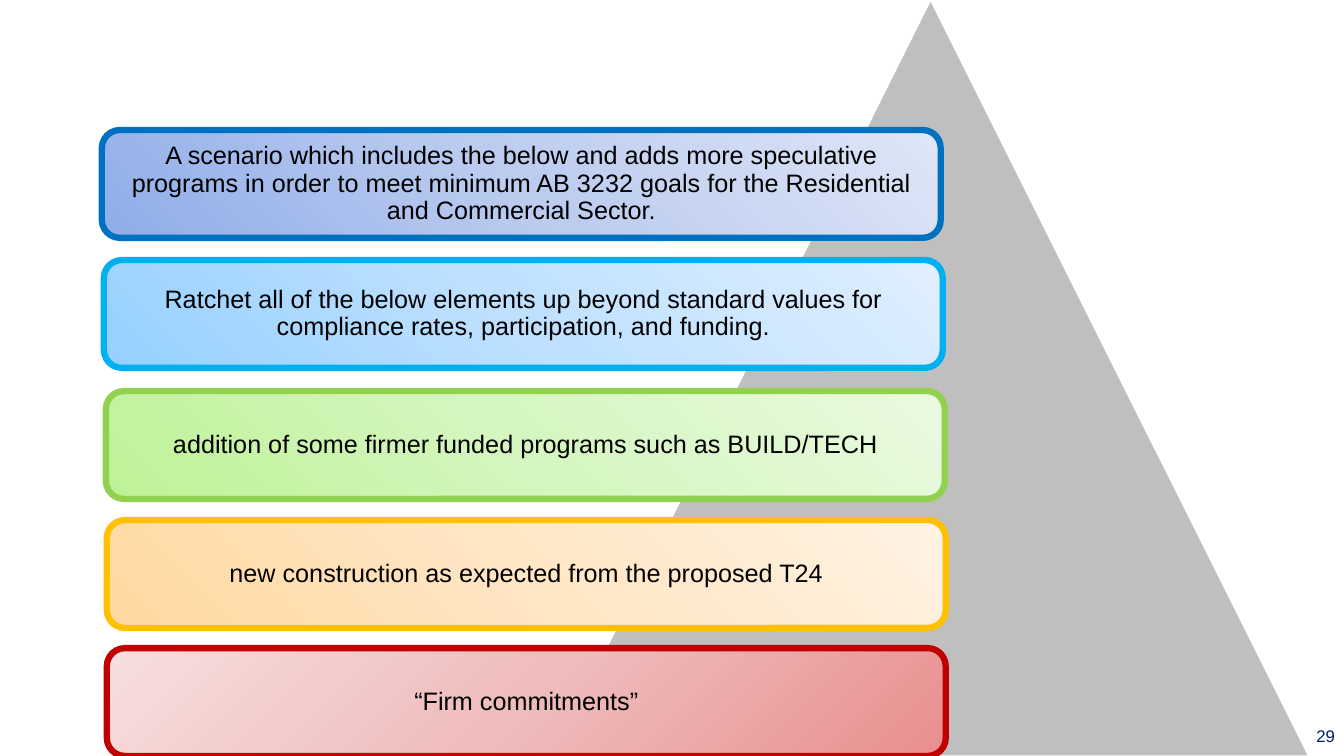
from dataclasses import dataclass

from lxml.etree import SubElement
from pptx import Presentation
from pptx.dml.color import RGBColor
from pptx.enum.shapes import MSO_SHAPE as Preset
from pptx.enum.text import MSO_ANCHOR as Anchor, PP_ALIGN as Align
from pptx.oxml.ns import qn
from pptx.shapes.autoshape import Shape
from pptx.slide import Slide
from pptx.util import Inches, Pt

SLIDE_WIDTH, SLIDE_HEIGHT = Inches(13.33), Inches(7.5)
FONT = "Arial"

BLACK = RGBColor(0x00, 0x00, 0x00)
WHITE = RGBColor(0xFF, 0xFF, 0xFF)
GRAY = RGBColor(0xBF, 0xBF, 0xBF)
NAVY = RGBColor(0x00, 0x20, 0x60)
RED = RGBColor(0xC0, 0x00, 0x00)
AMBER = RGBColor(0xFF, 0xC0, 0x00)
GREEN = RGBColor(0x92, 0xD0, 0x50)
SKY = RGBColor(0x00, 0xB0, 0xF0)
BLUE = RGBColor(0x00, 0x70, 0xC0)
RED_SHADES = (RGBColor(0xE9, 0x8F, 0x8F), RGBColor(0xEF, 0xBC, 0xBC), RGBColor(0xF7, 0xDE, 0xDE))
AMBER_SHADES = (RGBColor(0xFF, 0xD8, 0xA0), RGBColor(0xFF, 0xE6, 0xC5), RGBColor(0xFF, 0xF2, 0xE3))
GREEN_SHADES = (RGBColor(0xBE, 0xF2, 0x97), RGBColor(0xD5, 0xF6, 0xC0), RGBColor(0xEA, 0xFA, 0xE0))
SKY_SHADES = (RGBColor(0x96, 0xD0, 0xFF), RGBColor(0xBF, 0xE1, 0xFF), RGBColor(0xE0, 0xEF, 0xFF))
BLUE_SHADES = (RGBColor(0x8F, 0xAD, 0xE9), RGBColor(0xBC, 0xCC, 0xEF), RGBColor(0xDE, 0xE6, 0xF7))


@dataclass(frozen=True)
class Area:
    """A rectangle in percent of the slide's width and height."""
    left: float
    top: float
    width: float
    height: float

    def lengths(self) -> tuple[int, int, int, int]:
        return (round(SLIDE_WIDTH * self.left / 100), round(SLIDE_HEIGHT * self.top / 100),
                round(SLIDE_WIDTH * self.width / 100), round(SLIDE_HEIGHT * self.height / 100))


@dataclass(frozen=True)
class Tier:
    text: str
    left: float
    top: float
    border: RGBColor
    shades: tuple[RGBColor, RGBColor, RGBColor]
    glow_right: bool = False


NUMBER_AREA = Area(85.6, 94.67, 14.48, 5.33)
PYRAMID_AREA = Area(41.11, 0, 56.26, 100)
TIER_WIDTH, TIER_HEIGHT = 62.42, 14.27

TIERS = (
    Tier("“Firm commitments”", 7.95, 85.73, RED, RED_SHADES, glow_right=True),
    Tier("new construction as expected from the proposed T24", 7.95, 68.8, AMBER, AMBER_SHADES),
    Tier("addition of some firmer funded programs such as BUILD/TECH",
         7.88, 51.73, GREEN, GREEN_SHADES),
    Tier("Ratchet all of the below elements up beyond standard values for "
         "compliance rates, participation, and funding.", 7.73, 34.4, SKY, SKY_SHADES),
    Tier("A scenario which includes the below and adds more speculative programs in order "
         "to meet minimum AB 3232 goals for the Residential and Commercial Sector.",
         7.58, 17.2, BLUE, BLUE_SHADES),
)


def write(shape: Shape, text: str, size: float, color: RGBColor, align: Align) -> None:
    frame = shape.text_frame
    frame.word_wrap = True
    frame.vertical_anchor = Anchor.MIDDLE
    para = frame.paragraphs[0]
    para.text = text
    para.alignment = align
    para.font.name, para.font.size = FONT, Pt(size)
    para.font.color.rgb = color


def fill_radial(shape: Shape, tier: Tier) -> None:
    """Spread the tier's shades in circles from one of its bottom corners."""
    shape.fill.gradient()
    gradient = shape._element.spPr.find(qn("a:gradFill"))
    for child in list(gradient):
        gradient.remove(child)
    stops = SubElement(gradient, qn("a:gsLst"))
    for position, shade in zip((0, 50000, 100000), tier.shades):
        stop = SubElement(stops, qn("a:gs"), pos=str(position))
        SubElement(stop, qn("a:srgbClr"), val=str(shade))
    left, right = ("100000", "0") if tier.glow_right else ("0", "100000")
    circle = SubElement(gradient, qn("a:path"), {"path": "circle"})
    SubElement(circle, qn("a:fillToRect"), l=left, t="100000", r=right, b="0")


def add_outlined(page: Slide, preset: Preset, area: Area, line: RGBColor, weight: float) -> Shape:
    shape = page.shapes.add_shape(preset, *area.lengths())
    shape.shadow.inherit = False
    shape.line.color.rgb = line
    shape.line.width = Pt(weight)
    return shape


def add_number(page: Slide, number: str) -> None:
    title = page.shapes.title
    title.left, title.top, title.width, title.height = NUMBER_AREA.lengths()
    write(title, number, 12, NAVY, Align.RIGHT)


def add_pyramid(page: Slide) -> None:
    pyramid = add_outlined(page, Preset.ISOSCELES_TRIANGLE, PYRAMID_AREA, WHITE, 1)
    pyramid.fill.solid()
    pyramid.fill.fore_color.rgb = GRAY


def add_tier(page: Slide, tier: Tier) -> None:
    area = Area(tier.left, tier.top, TIER_WIDTH, TIER_HEIGHT)
    box = add_outlined(page, Preset.ROUNDED_RECTANGLE, area, tier.border, 4.5)
    fill_radial(box, tier)
    write(box, tier.text, 18, BLACK, Align.CENTER)
    frame = box.text_frame
    frame.margin_left = frame.margin_right = Inches(0.07)
    frame.margin_top = frame.margin_bottom = Inches(0.07)
    frame.paragraphs[0].line_spacing = 0.9


def main() -> None:
    deck = Presentation()
    deck.slide_width, deck.slide_height = SLIDE_WIDTH, SLIDE_HEIGHT
    page = deck.slides.add_slide(deck.slide_layouts.get_by_name("Title Only"))
    add_number(page, "29")
    add_pyramid(page)
    for tier in TIERS:
        add_tier(page, tier)
    deck.save("out.pptx")


if __name__ == "__main__":
    main()
